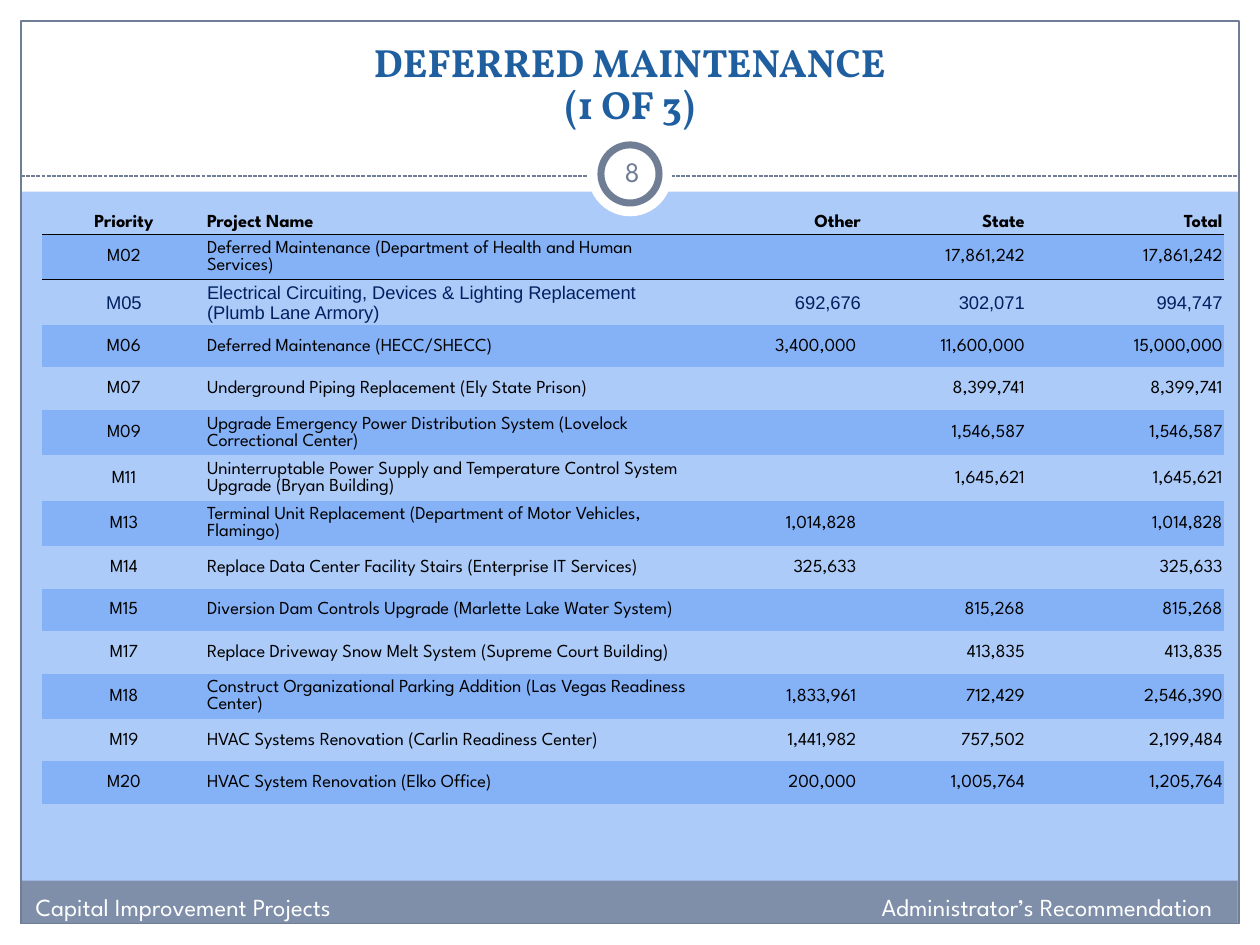
from dataclasses import dataclass

from lxml import etree
from pptx import Presentation
from pptx.dml.color import RGBColor
from pptx.enum.dml import MSO_LINE
from pptx.enum.shapes import MSO_CONNECTOR, MSO_SHAPE
from pptx.enum.text import MSO_ANCHOR, PP_ALIGN
from pptx.oxml.ns import qn
from pptx.util import Pt

RECTANGLE, OVAL = MSO_SHAPE.RECTANGLE, MSO_SHAPE.OVAL
LEFT, CENTER, RIGHT = PP_ALIGN.LEFT, PP_ALIGN.CENTER, PP_ALIGN.RIGHT
TOP, MIDDLE = MSO_ANCHOR.TOP, MSO_ANCHOR.MIDDLE
DASHED = MSO_LINE.SQUARE_DOT
PLAIN_TABLE_STYLE = "{2D5ABB26-0587-4C30-8999-92F81FD0307C}"


@dataclass(frozen=True)
class Theme:
    background: str = "ACCBF9"
    band: str = "85B2F6"
    white: str = "FFFFFF"
    black: str = "000000"
    navy: str = "002060"
    title: str = "1F5FA0"
    frame: str = "707E95"
    footer: str = "7F8FA9"
    title_font: str = "Vollkorn"
    body_font: str = "League Spartan"
    accent_font: str = "Arial"
    title_size: float = 22.5
    number_size: float = 16
    footer_size: float = 14
    table_size: float = 10.5


THEME = Theme()

COLUMNS = [("Priority", 93.6, CENTER), ("Project Name", 281.5, LEFT),
           ("Other", 93.6, RIGHT), ("State", 93.6, RIGHT), ("Total", 113, RIGHT)]
PROJECTS = [
    ("M02", "Deferred Maintenance (Department of Health and Human Services)",
     "", "17,861,242", "17,861,242"),
    ("M05", "Electrical Circuiting, Devices & Lighting Replacement (Plumb Lane Armory)",
     "692,676", "302,071", "994,747"),
    ("M06", "Deferred Maintenance (HECC/SHECC)", "3,400,000", "11,600,000", "15,000,000"),
    ("M07", "Underground Piping Replacement (Ely State Prison)", "", "8,399,741", "8,399,741"),
    ("M09", "Upgrade Emergency Power Distribution System (Lovelock Correctional Center)",
     "", "1,546,587", "1,546,587"),
    ("M11", "Uninterruptable Power Supply and Temperature Control System Upgrade "
     "(Bryan Building)", "", "1,645,621", "1,645,621"),
    ("M13", "Terminal Unit Replacement (Department of Motor Vehicles, Flamingo)",
     "1,014,828", "", "1,014,828"),
    ("M14", "Replace Data Center Facility Stairs (Enterprise IT Services)",
     "325,633", "", "325,633"),
    ("M15", "Diversion Dam Controls Upgrade (Marlette Lake Water System)",
     "", "815,268", "815,268"),
    ("M17", "Replace Driveway Snow Melt System (Supreme Court Building)",
     "", "413,835", "413,835"),
    ("M18", "Construct Organizational Parking Addition (Las Vegas Readiness Center)",
     "1,833,961", "712,429", "2,546,390"),
    ("M19", "HVAC Systems Renovation (Carlin Readiness Center)",
     "1,441,982", "757,502", "2,199,484"),
    ("M20", "HVAC System Renovation (Elko Office)", "200,000", "1,005,764", "1,205,764"),
]
HIGHLIGHTED = "M05"
OTHER_COLUMN = 2
HEADER_HEIGHT, ROW_HEIGHT, TALL_ROW_HEIGHT = 13.7, 24.3, 25.7
LONGEST_SINGLE_LINE = 60


def rgb(value):
    return RGBColor.from_string(value)


def set_attributes(target, **values):
    for name, value in values.items():
        setattr(target, name, value)


def set_margins(target, left, top, right, bottom):
    set_attributes(target, margin_left=Pt(left), margin_top=Pt(top),
                   margin_right=Pt(right), margin_bottom=Pt(bottom))


def style_run(run, font, size, color, bold=False):
    set_attributes(run.font, name=font, size=Pt(size), bold=bold)
    run.font.color.rgb = rgb(color)


def add_box(slide, kind, bounds, fill=None, line=None, width=0.75):
    shape = slide.shapes.add_shape(kind, *map(Pt, bounds))
    shape.shadow.inherit = False
    if fill:
        shape.fill.solid()
        shape.fill.fore_color.rgb = rgb(fill)
    else:
        shape.fill.background()
    if line:
        shape.line.color.rgb = rgb(line)
        shape.line.width = Pt(width)
    else:
        shape.line.fill.background()


def add_divider(slide, left, right, y):
    line = slide.shapes.add_connector(MSO_CONNECTOR.STRAIGHT, *map(Pt, (left, y, right, y)))
    set_attributes(line.line, width=Pt(0.75), dash_style=DASHED)
    line.line.color.rgb = rgb(THEME.frame)
    etree.SubElement(line.element.spPr, qn("a:effectLst"))


def add_text(slide, bounds, text, size, color, align, margins, anchor=TOP):
    frame = slide.shapes.add_textbox(*map(Pt, bounds)).text_frame
    set_attributes(frame, word_wrap=True, vertical_anchor=anchor)
    set_margins(frame, *margins)
    paragraph = frame.paragraphs[0]
    paragraph.alignment = align
    run = paragraph.add_run()
    run.text = text
    style_run(run, THEME.body_font, size, color)


def add_backdrop(slide):
    slide.background.fill.solid()
    slide.background.fill.fore_color.rgb = rgb(THEME.background)
    for bounds in [(0, 528, 720, 12), (0, 0, 720, 109.5), (0, 0, 12, 540), (708, 0, 12, 540)]:
        add_box(slide, RECTANGLE, bounds, THEME.white)
    add_box(slide, RECTANGLE, (11.7, 503.3, 695.6, 24.5), THEME.footer)
    add_box(slide, RECTANGLE, (12, 12, 696, 515.6), line=THEME.frame)
    add_divider(slide, 12, 708, 100.6)
    add_box(slide, OVAL, (336, 75.6, 48, 48), THEME.white)
    add_box(slide, OVAL, (343.4, 82.8, 33.2, 33.2), THEME.white, THEME.frame, 4)


def add_title(slide, lines):
    title = slide.shapes.title
    title.element.getparent().append(title.element)  # bring in front of the backdrop
    set_attributes(title, left=Pt(24), top=Pt(18), width=Pt(672), height=Pt(60))
    frame = title.text_frame
    set_attributes(frame, word_wrap=True, vertical_anchor=TOP)
    set_margins(frame, 7.2, 7.2, 7.2, 0)
    paragraph = frame.paragraphs[0]
    set_attributes(paragraph, alignment=CENTER, line_spacing=0.88)
    for index, text in enumerate(lines):
        if index:
            paragraph.add_line_break()
        run = paragraph.add_run()
        run.text = text
        style_run(run, THEME.title_font, THEME.title_size, THEME.title, True)


def add_border(cell, side):
    properties = cell._tc.get_or_add_tcPr()
    border = etree.Element(qn(f"a:{side}"), w=str(Pt(1)))
    fill = etree.SubElement(border, qn("a:solidFill"))
    etree.SubElement(fill, qn("a:srgbClr"), val=THEME.black)
    properties.insert(0, border)


def fill_cell(cell, text, align, font, color, bold, band, right_margin):
    cell.vertical_anchor = MIDDLE
    set_margins(cell, 0.72, 0.72, right_margin, 0)
    if band:
        cell.fill.solid()
        cell.fill.fore_color.rgb = rgb(THEME.band)
    else:
        cell.fill.background()
    if text:
        paragraph = cell.text_frame.paragraphs[0]
        paragraph.alignment = align
        run = paragraph.add_run()
        run.text = text
        style_run(run, font, THEME.table_size, color, bold)


def add_project_table(slide):
    names, widths, alignments = zip(*COLUMNS)
    rows = [names, *PROJECTS]
    heights = [HEADER_HEIGHT] + [
        TALL_ROW_HEIGHT if len(project[1]) > LONGEST_SINGLE_LINE else ROW_HEIGHT
        for project in PROJECTS]
    bounds = (24, 120.2, sum(widths), sum(heights))
    table = slide.shapes.add_table(len(rows), len(names), *map(Pt, bounds)).table
    table.horz_banding = False
    table._tbl.tblPr.find(qn("a:tableStyleId")).text = PLAIN_TABLE_STYLE
    for column, width in zip(table.columns, widths):
        column.width = Pt(width)
    for r, (values, height) in enumerate(zip(rows, heights)):
        table.rows[r].height = Pt(height)
        highlighted = values[0] == HIGHLIGHTED
        font = THEME.accent_font if highlighted else THEME.body_font
        color = THEME.navy if highlighted else THEME.black
        for c, (text, align) in enumerate(zip(values, alignments)):
            cell = table.cell(r, c)
            inset = c == OTHER_COLUMN and r > 0 and not highlighted
            fill_cell(cell, text, align, font, color, r == 0, r % 2 == 1, 3.4 if inset else 0.72)
            if r < 2:
                add_border(cell, "lnT" if r else "lnB")


def main():
    presentation = Presentation()
    set_attributes(presentation, slide_width=Pt(720), slide_height=Pt(540))
    slide = presentation.slides.add_slide(presentation.slide_layouts[5])
    add_backdrop(slide)
    add_title(slide, ["DEFERRED MAINTENANCE", "(1 OF 3)"])
    add_text(slide, (343.4, 80.6, 36, 34.6), "8", THEME.number_size, THEME.frame,
             CENTER, (3.6, 3.6, 3.6, 3.6), MIDDLE)
    for left, text, align in [(-12, "Capital Improvement Projects", LEFT),
                              (244, "Administrator’s Recommendation", RIGHT)]:
        add_text(slide, (left, 506.2, 456, 24.5), text, THEME.footer_size, THEME.white,
                 align, (32.4, 3.6, 7.2, 3.6))
    add_project_table(slide)
    presentation.save("out.pptx")


if __name__ == "__main__":
    main()
